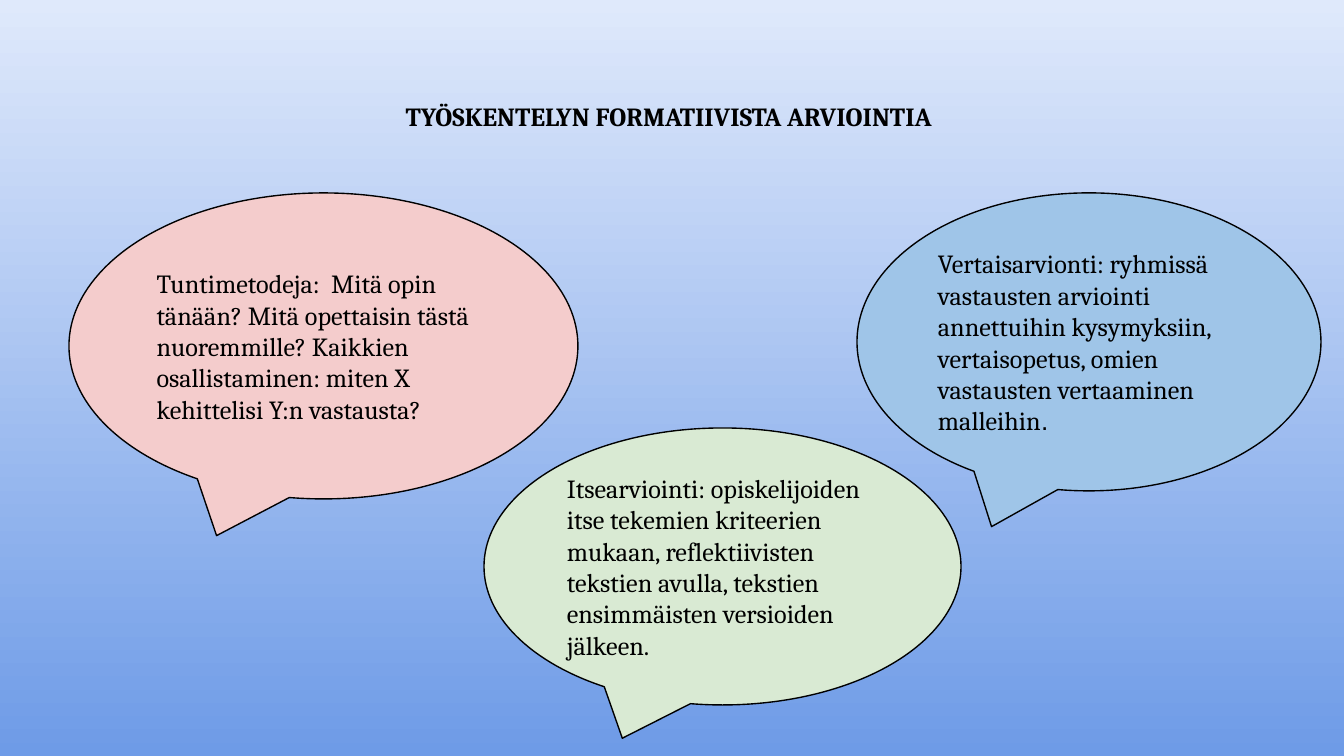
from pptx import Presentation
from pptx.dml.color import RGBColor
from pptx.enum.shapes import MSO_SHAPE
from pptx.enum.text import MSO_ANCHOR, PP_ALIGN
from pptx.util import Pt

CALLOUT = MSO_SHAPE.OVAL_CALLOUT
TOP, MIDDLE = MSO_ANCHOR.TOP, MSO_ANCHOR.MIDDLE
LEFT, CENTER = PP_ALIGN.LEFT, PP_ALIGN.CENTER

BLACK = RGBColor(0x00, 0x00, 0x00)
GREEN = RGBColor(0xD9, 0xEA, 0xD3)
PINK = RGBColor(0xF4, 0xCC, 0xCC)
BLUE = RGBColor(0x9F, 0xC5, 0xE8)
SKY = (RGBColor(0xDF, 0xE9, 0xFB), RGBColor(0x6E, 0x9B, 0xE7))

# Content: boxes are left, top, width, height in px; runs are text, font
TITLE = [("TYÖSKENTELYN FORMATIIVISTA ARVIOINTIA ", "Cambria")]
TITLE_BOX = (101, 87, 1142, 118)
BUBBLES = [
    ((484, 428, 477, 277), GREEN, [
        ("Itsearviointi: opiskelijoiden itse tekemien kriteerien mukaan, "
         "reflektiivisten tekstien avulla, tekstien ensimmäisten versioiden "
         "jälkeen.", "Cambria")]),
    ((69, 193, 509, 306), PINK, [
        ("Tuntimetodeja:  Mitä opin tänään? Mitä opettaisin tästä "
         "nuoremmille? Kaikkien osallistaminen: miten X kehittelisi Y:n "
         "vastausta?", "Cambria")]),
    ((857, 193, 464, 298), BLUE, [
        ("Vertaisarvionti: ryhmissä vastausten arviointi annettuihin "
         "kysymyksiin, vertaisopetus, omien vastausten vertaaminen "
         "malleihin", "Cambria"),
        (".", "Arial")]),
]
TAIL = (-0.21, 0.62)
INSET = 13
SCALE = 914400 / 134.4


def px(n):
    return round(n * SCALE)


def write(shape, runs, align, anchor, bold=False):
    frame = shape.text_frame
    form = {"word_wrap": True, "vertical_anchor": anchor}
    for side in ("left", "top", "right", "bottom"):
        form["margin_" + side] = px(INSET)
    for key, value in form.items():
        setattr(frame, key, value)
    para = frame.paragraphs[0]
    para.alignment = align
    for text, face in runs:
        run = para.add_run()
        run.text = text
        run.font.color.rgb = BLACK
        for key, value in {"name": face, "size": Pt(14), "bold": bold}.items():
            setattr(run.font, key, value)


deck = Presentation()
deck.slide_width, deck.slide_height = px(1344), px(756)
slide = deck.slides.add_slide(deck.slide_layouts[6])

# Background, light at the top
fill = slide.background.fill
fill.gradient()
fill.gradient_angle = 270
for stop, color in zip(fill.gradient_stops, SKY):
    stop.color.rgb = color

# Title
title = slide.shapes.add_textbox(*map(px, TITLE_BOX))
write(title, TITLE, CENTER, TOP, bold=True)

# Speech bubbles
for box, color, runs in BUBBLES:
    bubble = slide.shapes.add_shape(CALLOUT, *map(px, box))
    bubble.shadow.inherit = False
    bubble.fill.solid()
    bubble.fill.fore_color.rgb = color
    bubble.line.color.rgb = BLACK
    bubble.line.width = Pt(0.75)
    for i, value in enumerate(TAIL):
        bubble.adjustments[i] = value
    write(bubble, runs, LEFT, MIDDLE)

deck.save("out.pptx")
